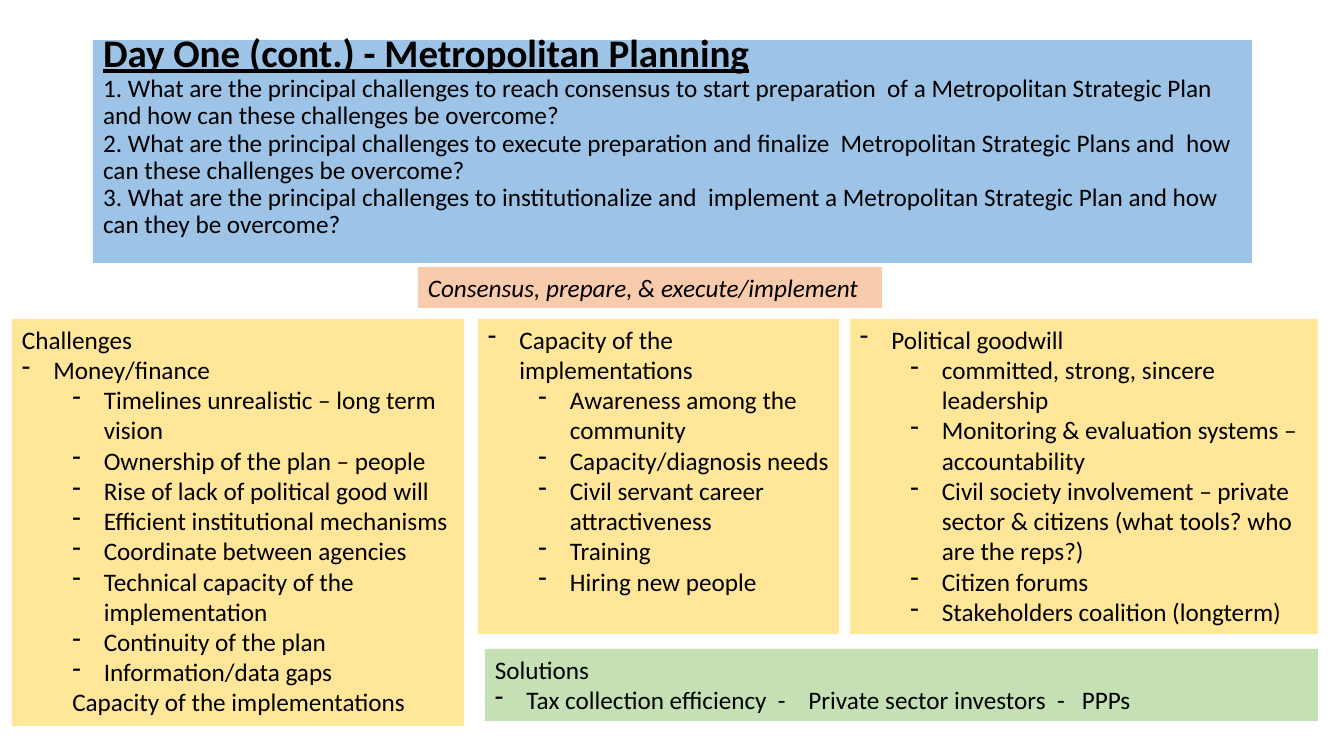
from copy import deepcopy

from lxml import etree
from pptx import Presentation
from pptx import util as u
from pptx.dml.color import RGBColor
from pptx.enum import shapes, text
from pptx.oxml.ns import qn

BLACK = RGBColor(0x00, 0x00, 0x00)
BLUE = RGBColor(0x9D, 0xC3, 0xE6)
YELLOW = RGBColor(0xFF, 0xE6, 0x99)
ORANGE = RGBColor(0xF8, 0xCB, 0xAD)
GREEN = RGBColor(0xC5, 0xE0, 0xB4)

PLAIN, DASH, SUBDASH, INDENTED = range(4)
# Left margin in points and whether a dash hangs in front of the text
INDENTS = {PLAIN: (0, False), DASH: (22.5, True),
           SUBDASH: (58.5, True), INDENTED: (36, False)}
HANGING = 22.5

HEADING = "Day One (cont.) - Metropolitan Planning"
QUESTIONS = [
    "1. What are the principal challenges to reach consensus to start preparation  of a "
    "Metropolitan Strategic Plan and how can these challenges be overcome?",
    "2. What are the principal challenges to execute preparation and finalize  Metropolitan "
    "Strategic Plans and  how can these challenges be overcome?",
    "3. What are the principal challenges to institutionalize and  implement a Metropolitan "
    "Strategic Plan and how can they be overcome?",
]
CHALLENGES = [
    (PLAIN, "Challenges"),
    (DASH, "Money/finance"),
    (SUBDASH, "Timelines unrealistic – long term vision"),
    (SUBDASH, "Ownership of the plan – people"),
    (SUBDASH, "Rise of lack of political good will"),
    (SUBDASH, "Efficient institutional mechanisms"),
    (SUBDASH, "Coordinate between agencies"),
    (SUBDASH, "Technical capacity of the implementation"),
    (SUBDASH, "Continuity of the plan"),
    (SUBDASH, "Information/data gaps"),
    (INDENTED, "Capacity of the implementations"),
]
CAPACITY = [
    (DASH, "Capacity of the implementations"),
    (SUBDASH, "Awareness among the community"),
    (SUBDASH, "Capacity/diagnosis needs"),
    (SUBDASH, "Civil servant career attractiveness"),
    (SUBDASH, "Training"),
    (SUBDASH, "Hiring new people"),
]
GOODWILL = [
    (DASH, "Political goodwill"),
    (SUBDASH, "committed, strong, sincere leadership"),
    (SUBDASH, "Monitoring & evaluation systems – accountability"),
    (SUBDASH, "Civil society involvement – private sector & citizens "
              "(what tools? who are the reps?)"),
    (SUBDASH, "Citizen forums"),
    (SUBDASH, "Stakeholders coalition (longterm)"),
]
SOLUTIONS = [
    (PLAIN, "Solutions"),
    (DASH, "Tax collection efficiency  -    Private sector investors  -   PPPs"),
]


def px(length):
    return u.Emu(round(length * 914400 / 100.8))


class Board:
    """The current slide and the style its elements share."""

    font = "Calibri"
    size = 18

    def __init__(self, page):
        self.page = page

    def style(self, span, **formats):
        values = {"name": self.font, "size": u.Pt(self.size), **formats}
        for name, value in values.items():
            setattr(span.font, name, value)
        span.font.color.rgb = BLACK

    def title(self, place, heading, lines, fill):
        box = self.page.shapes.title
        box.left, box.top, box.width, box.height = map(px, place)
        box.fill.solid()
        box.fill.fore_color.rgb = fill
        frame = box.text_frame
        frame.auto_size = text.MSO_AUTO_SIZE.NONE
        frame.vertical_anchor = text.MSO_ANCHOR.MIDDLE
        para = frame.paragraphs[0]
        para.alignment = text.PP_ALIGN.LEFT
        para.line_spacing = 0.9
        self.broken_line(para, heading, size=u.Pt(27.9), bold=True, underline=True)
        for line in lines:
            self.broken_line(para, line, bold=False, underline=False)
        etree.SubElement(para._p, qn("a:endParaRPr"), sz=str(self.size * 100))

    def broken_line(self, para, words, **formats):
        """Add a run and a line break of the same format."""
        span = para.add_run()
        span.text = words
        self.style(span, **formats)
        para.add_line_break()
        para._p[-1].append(deepcopy(span._r.rPr))

    def panel(self, place, entries, fill, **formats):
        box = self.page.shapes.add_shape(shapes.MSO_SHAPE.RECTANGLE, *map(px, place))
        box.shadow.inherit = False
        box.fill.solid()
        box.fill.fore_color.rgb = fill
        box.line.fill.background()
        frame = box.text_frame
        frame.word_wrap = True
        frame.vertical_anchor = text.MSO_ANCHOR.TOP
        for index, (kind, words) in enumerate(entries):
            para = frame.add_paragraph() if index else frame.paragraphs[0]
            para.alignment = text.PP_ALIGN.LEFT
            self.indent(para, kind)
            span = para.add_run()
            span.text = words
            self.style(span, **formats)

    def indent(self, para, kind):
        margin, dashed = INDENTS[kind]
        para.level = int(kind in (SUBDASH, INDENTED))
        props = para._p.get_or_add_pPr()
        props.set("marL", str(u.Pt(margin)))
        props.set("indent", str(-u.Pt(HANGING) if dashed else 0))
        if dashed:
            etree.SubElement(props, qn("a:buFontTx"))
            etree.SubElement(props, qn("a:buChar"), char="-")


def main():
    deck = Presentation()
    deck.slide_width, deck.slide_height = px(1344), px(756)
    board = Board(deck.slides.add_slide(deck.slide_layouts[5]))

    board.title((93, 40, 1159, 223), HEADING, QUESTIONS, BLUE)
    board.panel((12, 319, 452, 407), CHALLENGES, YELLOW)
    board.panel((418, 267, 464, 41), [(PLAIN, "Consensus, prepare, & execute/implement")],
                ORANGE, italic=True)
    board.panel((478, 319, 361, 315), CAPACITY, YELLOW)
    board.panel((850, 319, 468, 315), GOODWILL, YELLOW)
    board.panel((485, 649, 833, 72), SOLUTIONS, GREEN)
    deck.save("out.pptx")


if __name__ == "__main__":
    main()
